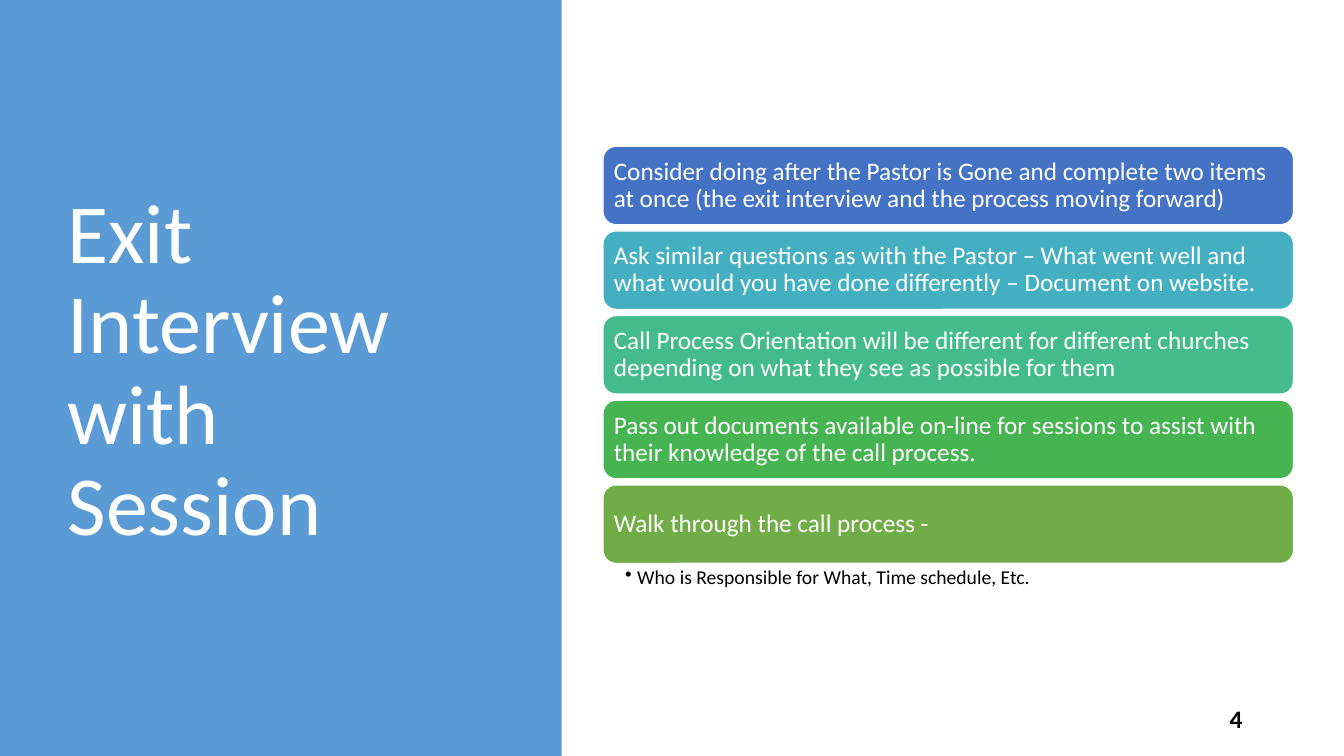
from pptx import Presentation
from pptx import util as u
from pptx.dml.color import RGBColor
from pptx.enum import shapes, text
from pptx.oxml import parse_xml
from pptx.oxml.ns import nsdecls

PX = u.Inches(1) // 100
FONT = "Calibri"
WHITE = RGBColor(0xFF, 0xFF, 0xFF)
BLACK = RGBColor(0x00, 0x00, 0x00)
PANEL_BLUE = RGBColor(0x5B, 0x9B, 0xD5)

STEPS = [
    ("Consider doing after the Pastor is Gone and complete two items at once "
     "(the exit interview and the process moving forward)", RGBColor(0x44, 0x72, 0xC4)),
    ("Ask similar questions as with the Pastor – What went well and what would "
     "you have done differently – Document on website.", RGBColor(0x43, 0xAF, 0xC0)),
    ("Call Process Orientation will be different for different churches "
     "depending on what they see as possible for them", RGBColor(0x43, 0xBB, 0x8D)),
    ("Pass out documents available on-line for sessions to assist with their "
     "knowledge of the call process.", RGBColor(0x45, 0xB4, 0x51)),
    ("Walk through the call process -", RGBColor(0x70, 0xAD, 0x47)),
]


def emu(*lengths):
    return [length * PX for length in lengths]


def write(shape, words, size, color, bold=False, align=text.PP_ALIGN.LEFT,
          anchor=text.MSO_ANCHOR.MIDDLE, insets=(10, 5, 10, 5)):
    """Fill a shape with one formatted paragraph and return the paragraph."""
    frame = shape.text_frame
    sides = ("margin_left", "margin_top", "margin_right", "margin_bottom")
    frame_format = dict(zip(sides, emu(*insets)), word_wrap=True,
                        auto_size=text.MSO_AUTO_SIZE.NONE, vertical_anchor=anchor)
    frame.text = words
    paragraph = frame.paragraphs[0]
    font = paragraph.runs[0].font
    for target, values in (
        (frame, frame_format),
        (paragraph, {"alignment": align, "line_spacing": 0.9}),
        (font, {"name": FONT, "size": u.Pt(size), "bold": bold}),
    ):
        for name, value in values.items():
            setattr(target, name, value)
    font.color.rgb = color
    return paragraph


def filled_shape(slide, kind, box, color):
    shape = slide.shapes.add_shape(kind, *emu(*box))
    shape.shadow.inherit = False
    shape.fill.solid()
    shape.fill.fore_color.rgb = color
    shape.line.fill.background()
    return shape


def title_panel(slide, left, top, width, height):
    panel = filled_shape(slide, shapes.MSO_SHAPE.RECTANGLE,
                         (left, top, width, height), PANEL_BLUE)
    title = slide.shapes.title
    panel_element = panel._element
    title._element.addprevious(panel_element)
    title.left, title.top, title.width, title.height = emu(left + 57, top + 68, 416, 602)
    write(title, "Exit Interview with Session", 60, WHITE)


def step_list(slide, left, top, width, bar_height=78, pitch=84):
    """Stack one bar per step, with the bulleted detail under the last bar."""
    for index, (words, color) in enumerate(STEPS):
        bar = filled_shape(slide, shapes.MSO_SHAPE.ROUNDED_RECTANGLE,
                           (left, top + index * pitch, width, bar_height), color)
        bar.line.color.rgb = WHITE
        bar.line.width = u.Pt(1)
        write(bar, words, 18, WHITE, insets=(7, 7, 7, 7))

    detail_top = top + (len(STEPS) - 1) * pitch + bar_height + 1
    detail = slide.shapes.add_textbox(*emu(left, detail_top, width, 33))
    paragraph = write(detail, "Who is Responsible for What, Time schedule, Etc.", 14, BLACK,
                      anchor=text.MSO_ANCHOR.TOP, insets=(22, 3, 14, 3))
    properties = paragraph._p.get_or_add_pPr()
    for name, value in {"marL": 12 * PX, "indent": -12 * PX, "lvl": 1}.items():
        properties.set(name, str(value))
    properties.append(parse_xml(f'<a:buChar {nsdecls("a")} char="•"/>'))


def page_number(slide, left, top, width, height):
    number = slide.shapes.add_textbox(*emu(left, top, width, height))
    write(number, "4", 18, BLACK, bold=True, align=text.PP_ALIGN.RIGHT)


def main():
    deck = Presentation()
    deck.slide_width, deck.slide_height = emu(1333, 750)
    slide = deck.slides.add_slide(deck.slide_layouts.get_by_name("Title Only"))
    title_panel(slide, 0, 0, 557, 750)
    page_number(slide, 942, 695, 300, 40)
    step_list(slide, 598, 145, 685)
    deck.save("out.pptx")


if __name__ == "__main__":
    main()
